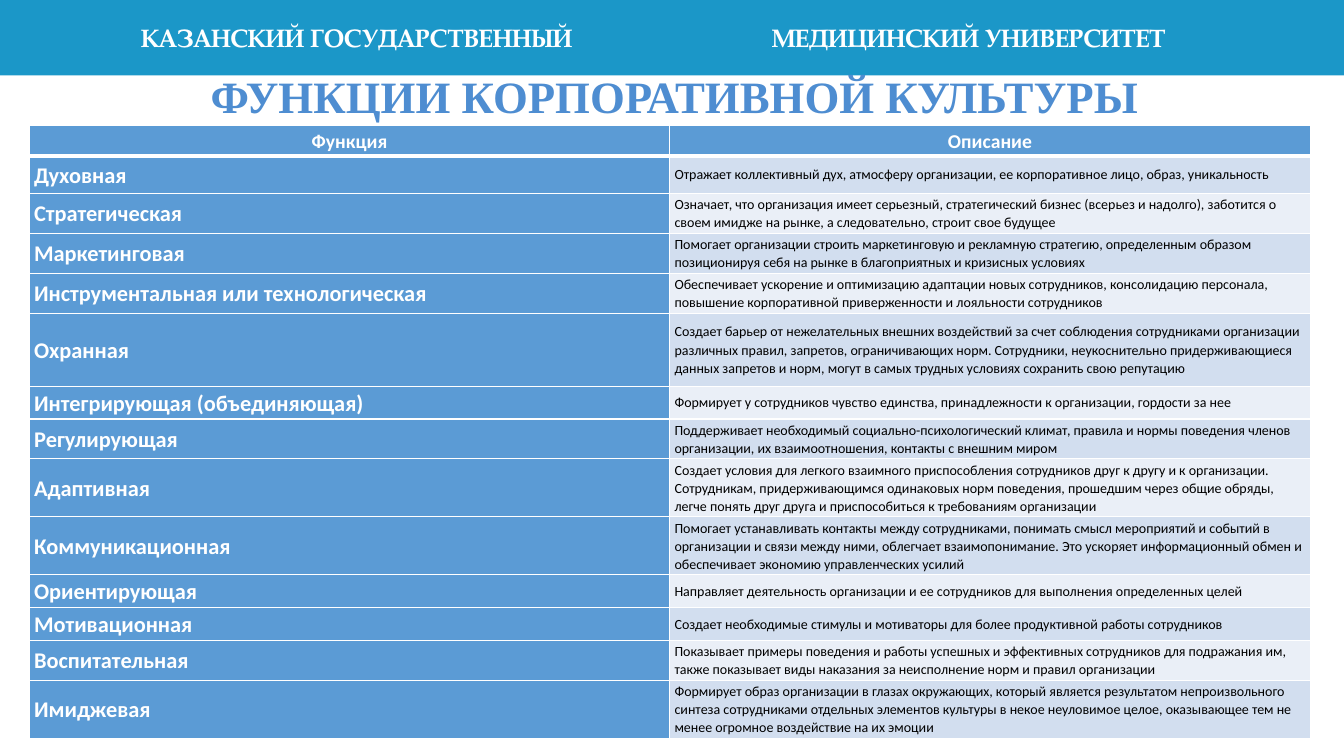
from lxml.etree import SubElement
from pptx import Presentation
from pptx.dml.color import RGBColor
from pptx.enum.shapes import MSO_SHAPE
from pptx.enum.text import MSO_ANCHOR, PP_ALIGN
from pptx.oxml.ns import qn
from pptx.util import Cm, Pt

COLORS = {
    "band": "1B97C8", "title": "4E8DD1", "white": "FFFFFF", "black": "000000",
    "accent": "5B9BD5", "odd": "D2DEEF", "even": "EAEFF7",
}

BANNER = dict(name="TeX Gyre Pagella", size=Pt(18), bold=True, color="white")
TITLE = dict(name="Times New Roman", size=Pt(32), bold=True, color="title")
HEADING = dict(name="Calibri", size=Pt(14), bold=True, color="white")
FUNCTION = dict(name="Calibri", size=Pt(16), bold=True, color="white")
DESCRIPTION = dict(name="Calibri", size=Pt(10), bold=False, color="black")

CELL_LAYOUT = dict(
    vertical_anchor=MSO_ANCHOR.MIDDLE,
    margin_left=Cm(0.12), margin_right=Cm(0.12),
    margin_top=Cm(0.05), margin_bottom=Cm(0.05),
)

# Function, description, row height in cm
FUNCTIONS = [
    ("Духовная", "Отражает коллективный дух, атмосферу организации, ее корпоративное "
     "лицо, образ, уникальность", 0.94),
    ("Стратегическая", "Означает, что организация имеет серьезный, стратегический бизнес "
     "(всерьез и надолго), заботится о своем имидже на рынке, а следовательно, строит "
     "свое будущее", 0.97),
    ("Маркетинговая", "Помогает организации строить маркетинговую и рекламную стратегию, "
     "определенным образом позиционируя себя на рынке в благоприятных и кризисных "
     "условиях", 0.97),
    ("Инструментальная или технологическая", "Обеспечивает ускорение и оптимизацию "
     "адаптации новых сотрудников, консолидацию персонала, повышение корпоративной "
     "приверженности и лояльности сотрудников", 0.97),
    ("Охранная", "Создает барьер от нежелательных внешних воздействий за счет соблюдения "
     "сотрудниками организации различных правил, запретов, ограничивающих норм. "
     "Сотрудники, неукоснительно придерживающиеся данных запретов и норм, могут в самых "
     "трудных условиях сохранить свою репутацию", 1.84),
    ("Интегрирующая (объединяющая)", "Формирует у сотрудников чувство единства, "
     "принадлежности к организации, гордости за нее", 0.79),
    ("Регулирующая", "Поддерживает необходимый социально-психологический климат, правила "
     "и нормы поведения членов организации, их взаимоотношения, контакты с внешним "
     "миром", 0.97),
    ("Адаптивная", "Создает условия для легкого взаимного приспособления сотрудников друг "
     "к другу и к организации. Сотрудникам, придерживающимся одинаковых норм поведения, "
     "прошедшим через общие обряды, легче понять друг друга и приспособиться к "
     "требованиям организации", 1.4),
    ("Коммуникационная", "Помогает устанавливать контакты между сотрудниками, понимать "
     "смысл мероприятий и событий в организации и связи между ними, облегчает "
     "взаимопонимание. Это ускоряет информационный обмен и обеспечивает экономию "
     "управленческих усилий", 1.4),
    ("Ориентирующая", "Направляет деятельность организации и ее сотрудников для выполнения "
     "определенных целей", 0.79),
    ("Мотивационная", "Создает необходимые стимулы и мотиваторы для более продуктивной "
     "работы сотрудников", 0.79),
    ("Воспитательная", "Показывает примеры поведения и работы успешных и эффективных "
     "сотрудников для подражания им, также показывает виды наказания за неисполнение "
     "норм и правил организации", 0.97),
    ("Имиджевая", "Формирует образ организации в глазах окружающих, который является "
     "результатом непроизвольного синтеза сотрудниками отдельных элементов культуры в "
     "некое неуловимое целое, оказывающее тем не менее огромное воздействие на их "
     "эмоции", 1.4),
]


def rgb(color):
    return RGBColor.from_string(COLORS[color])


def write(frame, text, style, align, spacing):
    paragraph = frame.paragraphs[0]
    paragraph.alignment = align
    paragraph.line_spacing = spacing
    run = paragraph.add_run()
    run.text = text
    for key, value in style.items():
        if key == "color":
            run.font.color.rgb = rgb(value)
        else:
            setattr(run.font, key, value)


def add_band(slide, width, height):
    band = slide.shapes.add_shape(MSO_SHAPE.RECTANGLE, 0, 0, width, height)
    band.shadow.inherit = False
    band.fill.solid()
    band.fill.fore_color.rgb = rgb("band")
    band.line.fill.background()


def add_label(slide, text, place, style, align, spacing=1.0):
    frame = slide.shapes.add_textbox(*map(Cm, place)).text_frame
    frame.word_wrap = True
    frame.vertical_anchor = MSO_ANCHOR.MIDDLE
    write(frame, text, style, align, spacing)


def add_border(cell, side, width):
    border = SubElement(cell._tc.get_or_add_tcPr(), qn(f"a:ln{side}"), w=str(Pt(width)))
    fill = SubElement(border, qn("a:solidFill"))
    SubElement(fill, qn("a:srgbClr"), val=COLORS["white"])


def fill_cell(cell, text, style, align, color, top=1, bottom=1):
    for key, value in CELL_LAYOUT.items():
        setattr(cell, key, value)
    for side, width in dict(L=1, R=1, T=top, B=bottom).items():
        add_border(cell, side, width)
    cell.fill.solid()
    cell.fill.fore_color.rgb = rgb(color)
    write(cell.text_frame, text, style, align, 1.07)


def add_functions_table(slide):
    heights = [0.76] + [height for _, _, height in FUNCTIONS]
    table = slide.shapes.add_table(
        len(heights), 2, Cm(0.74), Cm(3.17), Cm(32.28), Cm(sum(heights))).table
    for row, height in zip(table.rows, heights):
        row.height = Cm(height)

    # Heading row, set off by a thicker rule
    for column, heading in enumerate(("Функция", "Описание")):
        fill_cell(table.cell(0, column), heading, HEADING, PP_ALIGN.CENTER, "accent",
                  bottom=3)

    # Functions with banded descriptions
    for number, (function, description, _) in enumerate(FUNCTIONS, 1):
        top = 3 if number == 1 else 1
        fill_cell(table.cell(number, 0), function, FUNCTION, PP_ALIGN.LEFT, "accent", top)
        fill_cell(table.cell(number, 1), description, DESCRIPTION, PP_ALIGN.LEFT,
                  "odd" if number % 2 else "even", top)


def main():
    presentation = Presentation()
    presentation.slide_width, presentation.slide_height = Cm(33.87), Cm(19.05)
    slide = presentation.slides.add_slide(presentation.slide_layouts[6])

    # University banner
    add_band(slide, presentation.slide_width, Cm(1.9))
    add_label(slide, "КАЗАНСКИЙ ГОСУДАРСТВЕННЫЙ", (2.34, 0.43, 12.34, 1.02),
              BANNER, PP_ALIGN.RIGHT)
    add_label(slide, "МЕДИЦИНСКИЙ УНИВЕРСИТЕТ", (19.2, 0.43, 12.34, 1.02),
              BANNER, PP_ALIGN.LEFT)

    # Title and table
    add_label(slide, "ФУНКЦИИ КОРПОРАТИВНОЙ КУЛЬТУРЫ", (2.4, 1.85, 29.2, 1.3),
              TITLE, PP_ALIGN.CENTER, 0.9)
    add_functions_table(slide)

    presentation.save("out.pptx")


if __name__ == "__main__":
    main()
